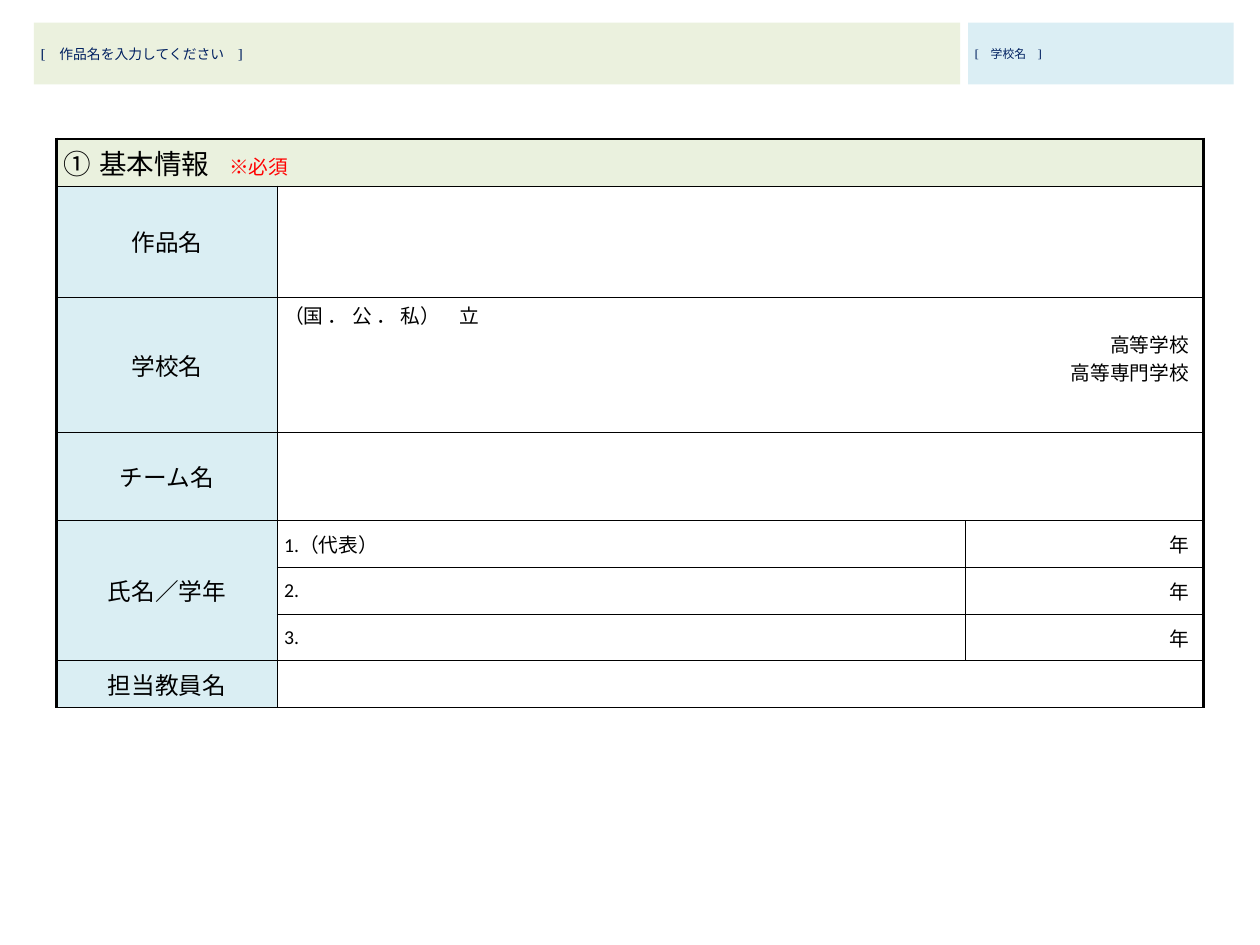
from dataclasses import dataclass

from lxml import etree
from pptx import Presentation
from pptx import util as u
from pptx.dml.color import RGBColor
from pptx.enum import lang, shapes, text
from pptx.oxml.ns import qn


@dataclass(frozen=True)
class Theme:
    body_font: str = "Calibri"
    banner_font: str = "TeX Gyre Schola"
    black: str = "000000"
    red: str = "FF0000"
    navy: str = "002060"
    heading_fill: str = "EAF1DE"
    label_fill: str = "DAEEF3"
    title_banner: str = "EBF1DE"
    school_banner: str = "DBEEF4"
    heading: int = 28
    label: int = 24
    body: int = 20
    frame: float = 3
    rule: float = 0.75


T = Theme()
LEFT, CENTER, RIGHT = text.PP_ALIGN.LEFT, text.PP_ALIGN.CENTER, text.PP_ALIGN.RIGHT
TOP, MIDDLE = text.MSO_ANCHOR.TOP, text.MSO_ANCHOR.MIDDLE
COLUMNS = (3.11, 9.71, 3.36)
ROWS = (0.66, 1.57, 1.91, 1.24, 0.66, 0.66, 0.66, 0.66)


@dataclass(frozen=True)
class Run:
    words: str
    size: int = T.body
    color: str = T.black
    font: str = T.body_font


@dataclass(frozen=True)
class Para:
    runs: tuple[Run, ...]
    align: text.PP_ALIGN = LEFT


@dataclass(frozen=True)
class Banner:
    left: float
    width: float
    fill: str
    run: Run


@dataclass(frozen=True)
class Entry:
    row: int
    col: int
    paras: tuple[Para, ...] = ()
    rows: int = 1
    cols: int = 1
    fill: str = ""
    anchor: text.MSO_ANCHOR = MIDDLE


def label(row: int, words: str, rows: int = 1) -> Entry:
    para = Para((Run(words, T.label),), CENTER)
    return Entry(row, 0, (para,), rows=rows, fill=T.label_fill)


def line(words: str, align: text.PP_ALIGN = LEFT) -> Para:
    return Para((Run(words),), align)


BANNERS = (
    Banner(0.48, 13.07, T.title_banner,
           Run("[　作品名を入力してください　]", 14, T.navy, T.banner_font)),
    Banner(13.66, 3.75, T.school_banner,
           Run("[　学校名　]", 12, T.navy, T.banner_font)),
)
HEADING = Para((Run("基本情報", T.heading), Run("　"), Run("※必須", color=T.red)))
SCHOOL = (line("（国 ． 公 ． 私）　立"),
          line("高等学校", RIGHT), line("高等専門学校", RIGHT))
MEMBERS = ("1.（代表）", "2.", "3.")
FIRST_MEMBER = 4
ENTRIES = (
    Entry(0, 0, (HEADING,), cols=3, fill=T.heading_fill, anchor=TOP),
    label(1, "作品名"),
    Entry(1, 1, cols=2),
    label(2, "学校名"),
    Entry(2, 1, SCHOOL, cols=2, anchor=TOP),
    label(3, "チーム名"),
    Entry(3, 1, cols=2),
    label(FIRST_MEMBER, "氏名／学年", len(MEMBERS)),
    *(Entry(i, 1, (line(m),)) for i, m in enumerate(MEMBERS, FIRST_MEMBER)),
    *(Entry(i, 2, (line("年", RIGHT),)) for i, _ in enumerate(MEMBERS, FIRST_MEMBER)),
    label(7, "担当教員名"),
    Entry(7, 1, cols=2),
)


def write(tf, paras: tuple[Para, ...]) -> None:
    for i, para in enumerate(paras):
        p = tf.add_paragraph() if i else tf.paragraphs[0]
        p.alignment = para.align
        for run in para.runs:
            r = p.add_run()
            r.text = run.words
            r.font.size = u.Pt(run.size)
            r.font.name = run.font
            r.font.bold = False
            r.font.language_id = lang.MSO_LANGUAGE_ID.JAPANESE
            r.font.color.rgb = RGBColor.from_string(run.color)


def add_banner(s, banner: Banner) -> None:
    sp = s.shapes.add_shape(shapes.MSO_SHAPE.RECTANGLE, u.Inches(banner.left),
                            u.Inches(0.32), u.Inches(banner.width), u.Inches(0.87))
    sp.shadow.inherit = False
    sp.fill.solid()
    sp.fill.fore_color.rgb = RGBColor.from_string(banner.fill)
    sp.line.fill.background()
    tf = sp.text_frame
    tf.word_wrap = True
    tf.vertical_anchor = MIDDLE
    write(tf, (Para((banner.run,)),))


def set_borders(cell, widths: dict[str, float]) -> None:
    tc_pr = cell._tc.get_or_add_tcPr()
    for i, (side, width) in enumerate(widths.items()):
        ln = etree.Element(qn(f"a:ln{side}"), w=str(u.Pt(width)))
        fill = etree.SubElement(ln, qn("a:solidFill"))
        etree.SubElement(fill, qn("a:srgbClr"), val=T.black)
        tc_pr.insert(i, ln)


def fill_entry(table, entry: Entry) -> None:
    cell = table.cell(entry.row, entry.col)
    last_row, last_col = entry.row + entry.rows - 1, entry.col + entry.cols - 1
    if entry.rows * entry.cols > 1:
        cell.merge(table.cell(last_row, last_col))
    left = T.frame if entry.col == 0 else T.rule
    right = T.frame if last_col == len(COLUMNS) - 1 else T.rule
    top = T.frame if entry.row == 0 else T.rule
    for row in range(entry.row, last_row + 1):
        for col in range(entry.col, last_col + 1):
            part = table.cell(row, col)
            if entry.fill:
                part.fill.solid()
                part.fill.fore_color.rgb = RGBColor.from_string(entry.fill)
            else:
                part.fill.background()
            set_borders(part, {"L": left, "R": right, "T": top, "B": T.rule})
    cell.vertical_anchor = entry.anchor
    if any(para.align == RIGHT for para in entry.paras):
        cell.margin_right = u.Inches(0.2)
    write(cell.text_frame, entry.paras)


def number_heading(p) -> None:
    p_pr = p._p.get_or_add_pPr()
    p_pr.set("marL", str(u.Inches(0.5)))
    p_pr.set("indent", str(u.Inches(-0.5)))
    etree.SubElement(p_pr, qn("a:buFont"), typeface="+mj-lt")
    etree.SubElement(p_pr, qn("a:buAutoNum"), type="circleNumDbPlain")


def add_form(s) -> None:
    frame = s.shapes.add_table(len(ROWS), len(COLUMNS), u.Inches(0.8), u.Inches(1.96),
                               u.Inches(sum(COLUMNS)), u.Inches(sum(ROWS)))
    table = frame.table
    table.first_row = table.horz_banding = False
    for column, width in zip(table.columns, COLUMNS):
        column.width = u.Inches(width)
    for row, height in zip(table.rows, ROWS):
        row.height = u.Inches(height)
    for entry in ENTRIES:
        fill_entry(table, entry)
    number_heading(table.cell(0, 0).text_frame.paragraphs[0])


def main() -> None:
    prs = Presentation()
    prs.slide_width, prs.slide_height = u.Inches(17.78), u.Inches(13.33)
    s = prs.slides.add_slide(prs.slide_layouts[6])
    add_form(s)
    for banner in BANNERS:
        add_banner(s, banner)
    prs.save("out.pptx")


if __name__ == "__main__":
    main()
